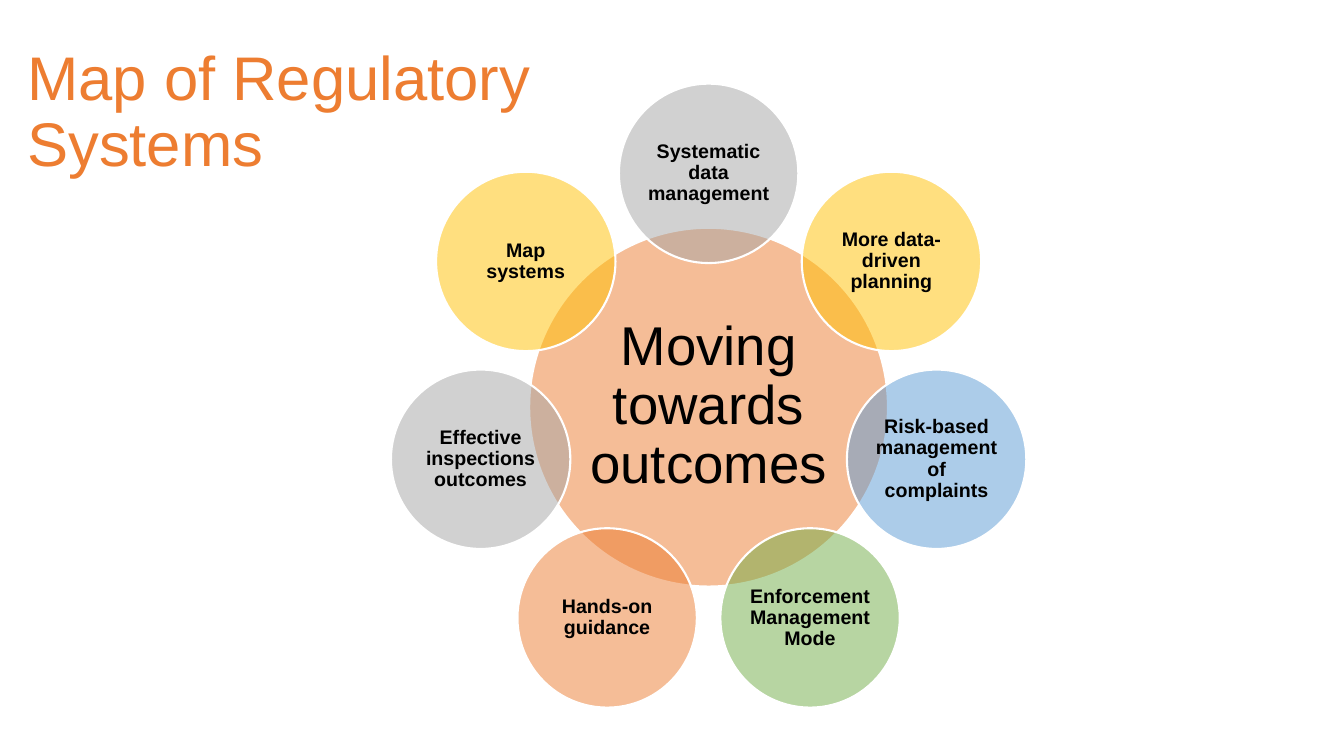
import math

import lxml.etree
import pptx
import pptx.dml.color
import pptx.enum.shapes
import pptx.enum.text
import pptx.oxml.ns
import pptx.util

Inches = pptx.util.Inches
Align = pptx.enum.text.PP_ALIGN


def color(hex_string):
    return pptx.dml.color.RGBColor.from_string(hex_string)


def write_text(shape, text, size, text_color="000000", bold=False,
               align=Align.CENTER, margins=(0.1, 0.05), space_after=0):
    frame = shape.text_frame
    frame.word_wrap = True
    frame.auto_size = pptx.enum.text.MSO_AUTO_SIZE.NONE
    frame.vertical_anchor = pptx.enum.text.MSO_ANCHOR.MIDDLE
    frame.margin_left = frame.margin_right = Inches(margins[0])
    frame.margin_top = frame.margin_bottom = Inches(margins[1])
    para = frame.paragraphs[0]
    para.alignment = align
    para.line_spacing = 0.9
    para.space_after = pptx.util.Pt(space_after)
    span = para.add_run()
    span.text = text
    span.font.name = "Arial"
    span.font.size = pptx.util.Pt(size)
    span.font.bold = bold
    span.font.color.rgb = color(text_color)


ORANGE, GRAY, YELLOW = "ED7D31", "A5A5A5", "FFC000"
BLUE, GREEN, WHITE = "5B9BD5", "70AD47", "FFFFFF"

# Widescreen page, 16 to 9
deck = pptx.Presentation()
deck.slide_height = Inches(7.5)
deck.slide_width = Inches(7.5 * 16 / 9)
page = deck.slides.add_slide(deck.slide_layouts[5])

# Title
title = page.shapes.title
title.left, title.top = Inches(0.17), Inches(0.4)
title.width, title.height = Inches(5.9), Inches(1.45)
write_text(title, "Map of Regulatory Systems", 44, text_color=ORANGE,
           align=Align.LEFT, space_after=6)

# Hub circle and its ring of topics, clockwise from the top
HUB_X, HUB_Y = 7.03, 4.04
RING_RADIUS = 2.32
HUB_SIZE, TOPIC_SIZE = 3.56, 1.78
topics = [
    ("Systematic data management", GRAY),
    ("More data-driven planning", YELLOW),
    ("Risk-based management of complaints", BLUE),
    ("Enforcement Management Mode", GREEN),
    ("Hands-on guidance", ORANGE),
    ("Effective inspections outcomes", GRAY),
    ("Map systems", YELLOW),
]
circles = [("Moving towards outcomes", ORANGE, HUB_X, HUB_Y, HUB_SIZE, 39, False, 0.05)]
for index, (label, fill) in enumerate(topics):
    angle = 2 * math.pi * index / len(topics)
    center_x = HUB_X + RING_RADIUS * math.sin(angle)
    center_y = HUB_Y - RING_RADIUS * math.cos(angle)
    circles.append((label, fill, center_x, center_y, TOPIC_SIZE, 14, True, 0.02))

# Half-transparent circles with white outlines
for label, fill, center_x, center_y, size, font_size, bold, margin in circles:
    circle = page.shapes.add_shape(
        pptx.enum.shapes.MSO_SHAPE.OVAL,
        Inches(center_x - size / 2), Inches(center_y - size / 2),
        Inches(size), Inches(size))
    circle.shadow.inherit = False
    circle.fill.solid()
    circle.fill.fore_color.rgb = color(fill)
    fill_color = next(circle.element.spPr.iter(pptx.oxml.ns.qn("a:srgbClr")))
    lxml.etree.SubElement(fill_color, pptx.oxml.ns.qn("a:alpha"), val="50000")
    circle.line.color.rgb = color(WHITE)
    circle.line.width = pptx.util.Pt(1.5)
    write_text(circle, label, font_size, bold=bold, margins=(margin, margin))

deck.save("out.pptx")
